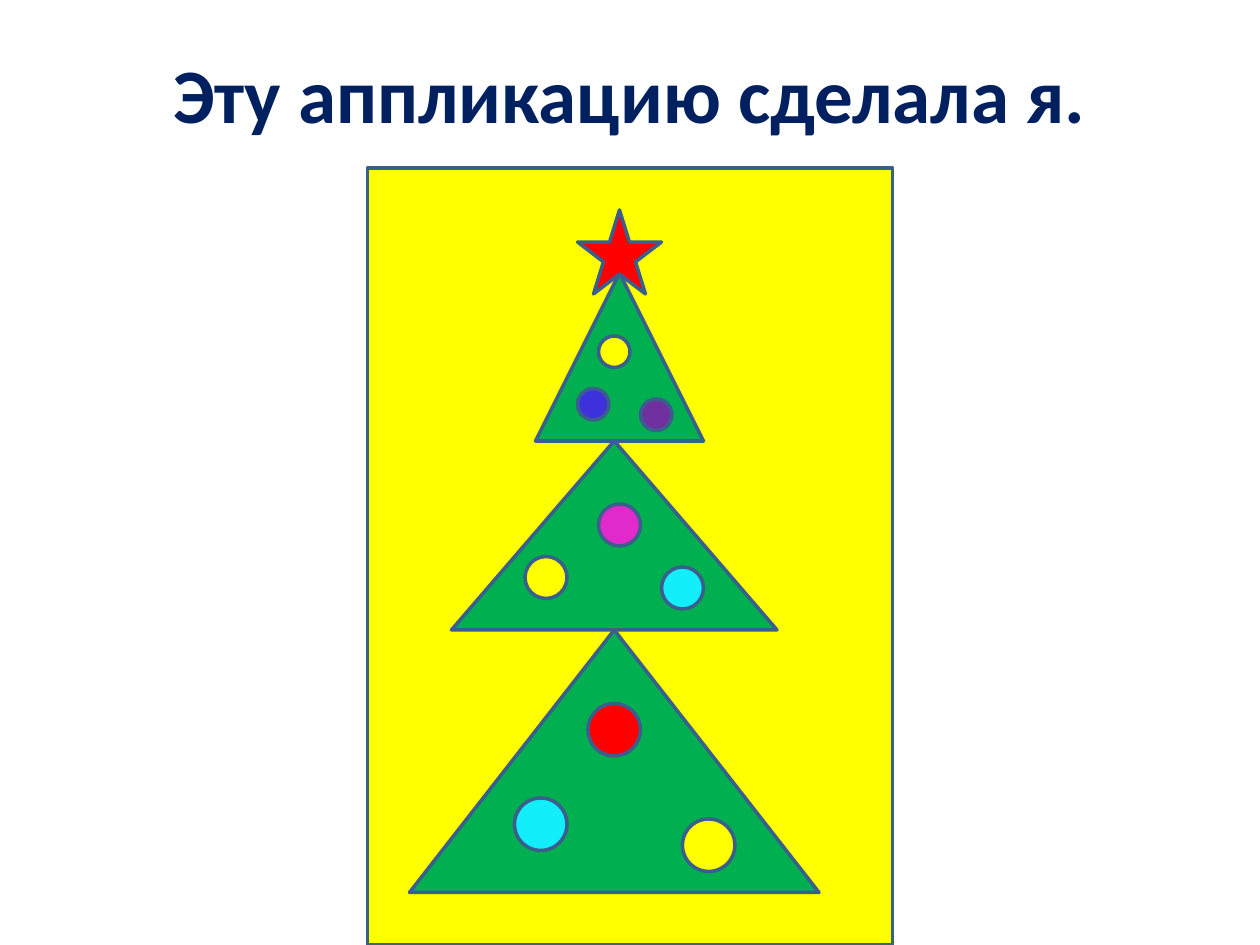
from dataclasses import dataclass

from pptx import Presentation
from pptx.dml.color import RGBColor
from pptx.enum.shapes import MSO_SHAPE
from pptx.enum.text import MSO_ANCHOR, PP_ALIGN
from pptx.util import Inches, Pt


@dataclass(frozen=True)
class Theme:
    font: str = "Calibri"
    title_size: int = 44
    title: str = "002060"
    outline: str = "3A5F8C"
    outline_width: int = 2
    yellow: str = "FFFF00"
    green: str = "00B050"
    red: str = "FF0000"
    purple: str = "7030A0"
    blue: str = "3D31DB"
    cyan: str = "12EFFA"
    pink: str = "E22ACC"


THEME = Theme()
CELL = Inches(1) // 12  # the slide is a grid of 120 columns by 90 rows
COLUMNS, ROWS = 120, 90

# column, row, width, height
TIERS = [(39, 60, 39, 25), (43, 42, 31, 18), (51, 26, 16, 16)]

# diameter: (column, row, colour) of each ball
BALLS = {
    3: [(61, 38, THEME.purple), (55, 37, THEME.blue), (57, 32, THEME.yellow)],
    4: [(63, 54, THEME.cyan), (50, 53, THEME.yellow), (57, 48, THEME.pink)],
    5: [(56, 67, THEME.red), (49, 76, THEME.cyan), (65, 78, THEME.yellow)],
}


def add_title(slide, text):
    title = slide.shapes.title
    title.left, title.top = Inches(0.5), Inches(0.3)
    title.width, title.height = Inches(9), Inches(0.87)
    frame = title.text_frame
    frame.word_wrap = True
    frame.vertical_anchor = MSO_ANCHOR.MIDDLE
    paragraph = frame.paragraphs[0]
    paragraph.alignment = PP_ALIGN.CENTER
    run = paragraph.add_run()
    run.text = text
    run.font.name = THEME.font
    run.font.size = Pt(THEME.title_size)
    run.font.bold = True
    run.font.color.rgb = RGBColor.from_string(THEME.title)


def add_cutout(slide, kind, column, row, width, height, colour):
    """Add an outlined paper piece, placed in grid cells."""
    cells = (column, row, width, height)
    shape = slide.shapes.add_shape(kind, *(CELL * count for count in cells))
    shape.shadow.inherit = False
    shape.fill.solid()
    shape.fill.fore_color.rgb = RGBColor.from_string(colour)
    shape.line.color.rgb = RGBColor.from_string(THEME.outline)
    shape.line.width = Pt(THEME.outline_width)


def add_tree(slide):
    for tier in TIERS:
        add_cutout(slide, MSO_SHAPE.ISOSCELES_TRIANGLE, *tier, THEME.green)
    add_cutout(slide, MSO_SHAPE.STAR_5_POINT, 55, 20, 8, 8, THEME.red)


def add_balls(slide):
    for size, balls in BALLS.items():
        for column, row, colour in balls:
            add_cutout(slide, MSO_SHAPE.OVAL, column, row, size, size, colour)


def main():
    presentation = Presentation()
    presentation.slide_width = CELL * COLUMNS
    presentation.slide_height = CELL * ROWS
    slide = presentation.slides.add_slide(presentation.slide_layouts[5])
    add_title(slide, "Эту аппликацию сделала я.")
    add_cutout(slide, MSO_SHAPE.RECTANGLE, 35, 16, 50, 74, THEME.yellow)
    add_tree(slide)
    add_balls(slide)
    presentation.save("out.pptx")


if __name__ == "__main__":
    main()
